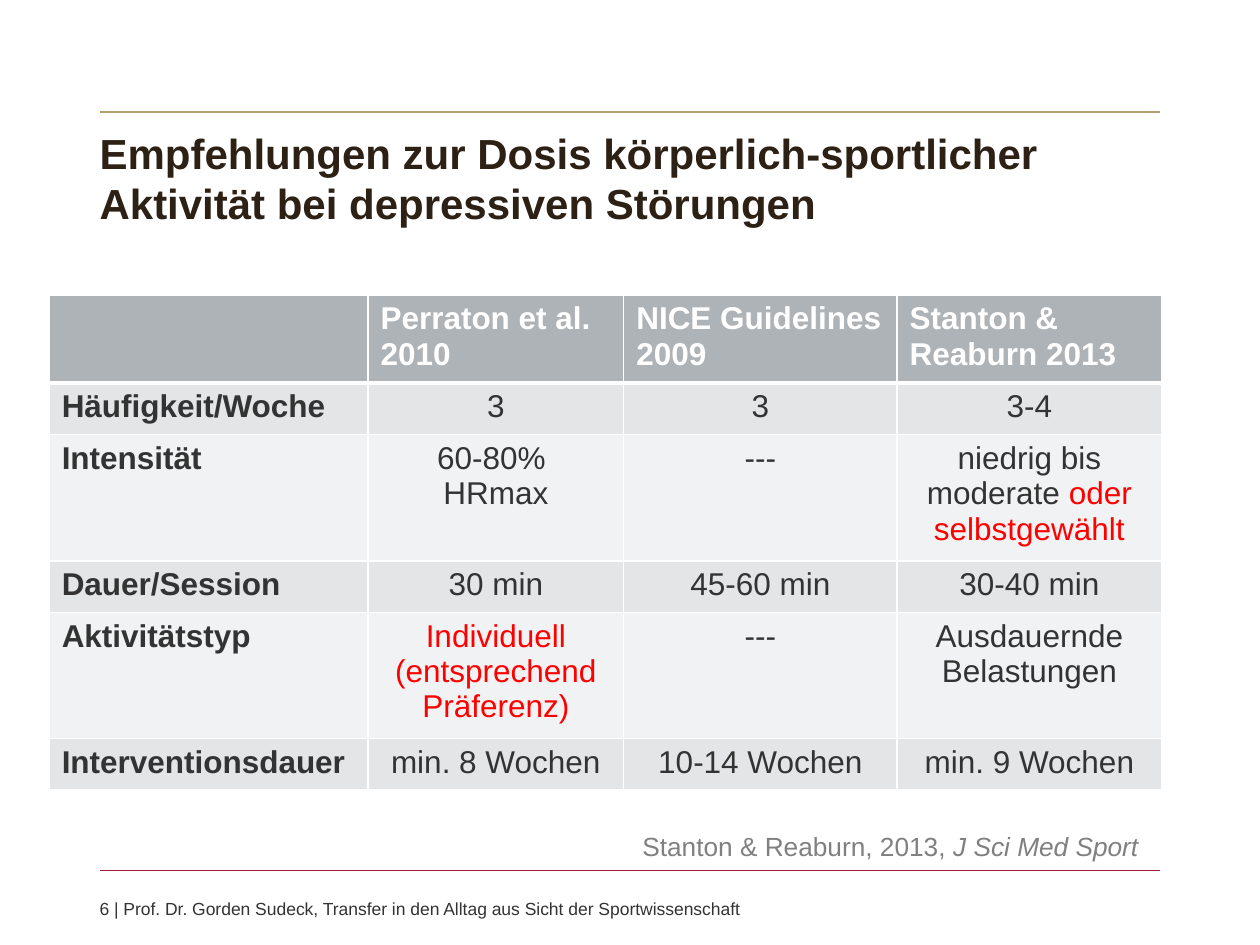
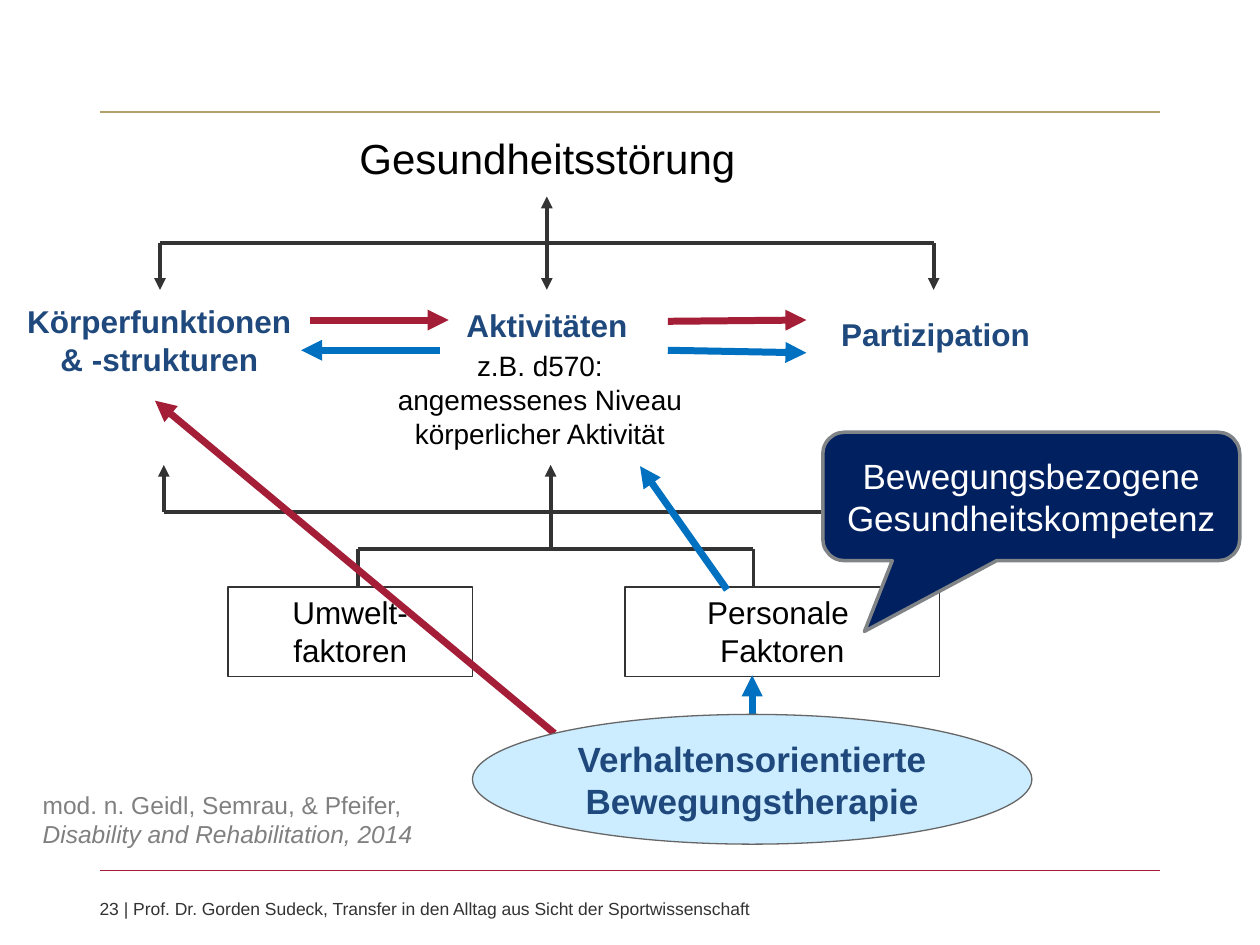
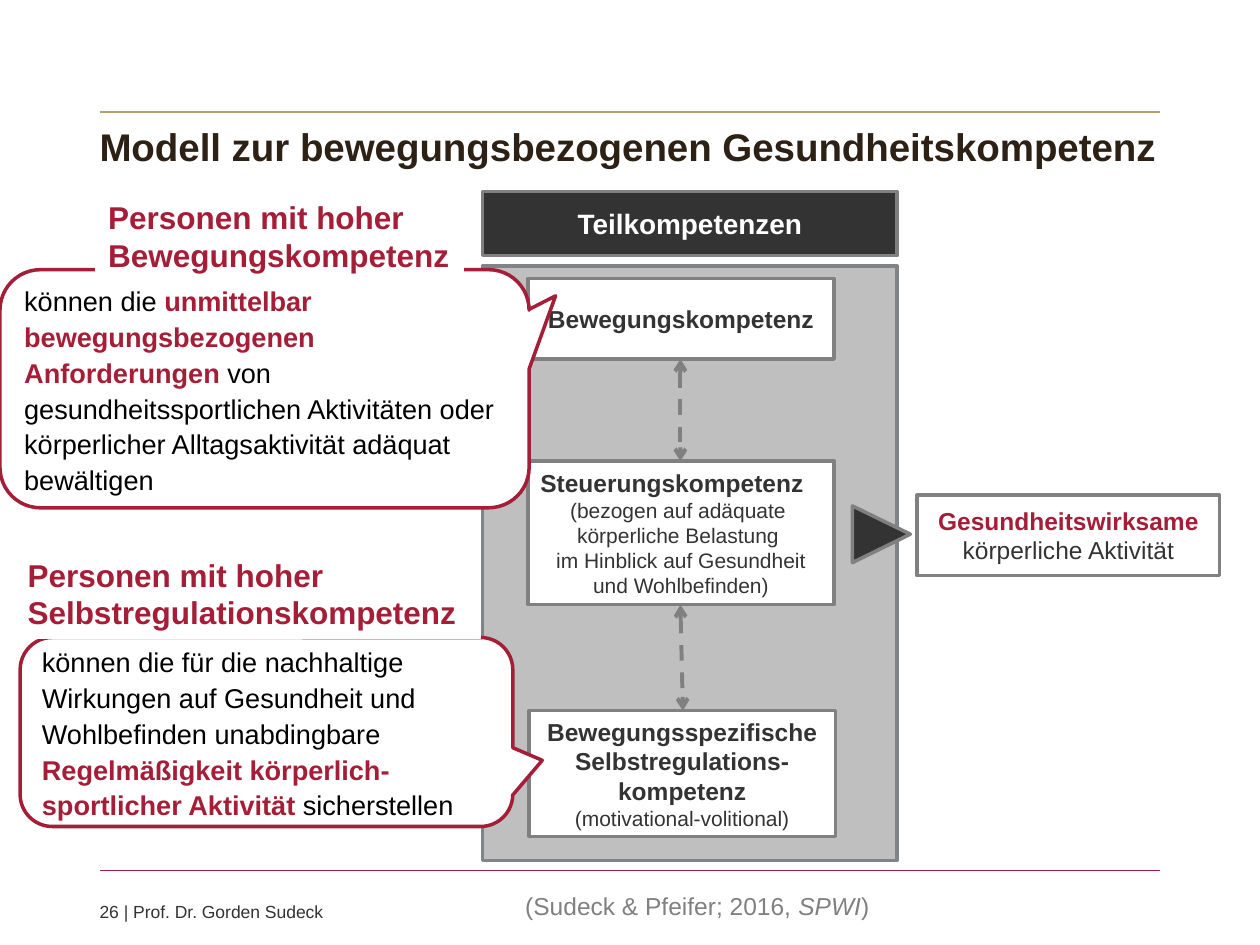
from lxml import etree
from pptx import Presentation
from pptx import util as u
from pptx.dml.color import RGBColor
from pptx.enum import dml, shapes, text
from pptx.oxml.ns import qn

FONT = "Arial"
WHITE = RGBColor(0xFF, 0xFF, 0xFF)
BLACK = RGBColor(0, 0, 0)
DARK = RGBColor(0x33, 0x33, 0x33)
GREY = RGBColor(0x80, 0x80, 0x80)
STEEL = RGBColor(0x80, 0x84, 0x87)
SILVER = RGBColor(0xBF, 0xBF, 0xBF)
EDGE = RGBColor(0x66, 0x66, 0x66)
BROWN = RGBColor(0x2D, 0x20, 0x15)
GOLD = RGBColor(0xB4, 0xA0, 0x69)
CRIMSON = RGBColor(0xA5, 0x1E, 0x37)
RED = RGBColor(0xFF, 0, 0)
BLUE = RGBColor(0, 0x70, 0xC0)
INK = RGBColor(0x1F, 0x49, 0x7D)
NAVY = RGBColor(0, 0x20, 0x60)
SKY = RGBColor(0xCC, 0xEC, 0xFF)
HEAD = RGBColor(0xAD, 0xB3, 0xB7)
BANDS = [RGBColor(0xE3, 0xE5, 0xE6), RGBColor(0xF1, 0xF2, 0xF3)]

RECT = shapes.MSO_SHAPE.RECTANGLE
CALLOUT = shapes.MSO_SHAPE.ROUNDED_RECTANGULAR_CALLOUT
LEFT, CENTER = text.PP_ALIGN.LEFT, text.PP_ALIGN.CENTER
TOP, MIDDLE, BOTTOM = text.MSO_ANCHOR.TOP, text.MSO_ANCHOR.MIDDLE, text.MSO_ANCHOR.BOTTOM

prs = Presentation()
prs.slide_width, prs.slide_height = u.Inches(10), u.Inches(7.5)
# Grid of 10 columns by 7.5 rows; all places are given in columns and rows
COL, ROW = prs.slide_width / 10, prs.slide_height / 7.5
X0, X1 = 0.79, 9.21


def box(s, at, paras=(), size=18, color=BLACK, bold=False, align=LEFT, anchor=TOP,
        kind=None, fill=None, line=None, width=2, inset=(0.1, 0.05), adj=(), spacing=None):
    """Text box or shape; a paragraph is a list of (text, font changes) runs."""
    x, y, w, h = at
    place = int(x * COL), int(y * ROW), int(w * COL), int(h * ROW)
    if kind is None:
        sp = s.shapes.add_textbox(*place)
    else:
        sp = s.shapes.add_shape(kind, *place)
        sp.shadow.inherit = False
        for i, value in enumerate(adj):
            sp.adjustments[i] = value
        if fill is None:
            sp.fill.background()
        else:
            sp.fill.solid()
            sp.fill.fore_color.rgb = fill
        sp.line.color.rgb, sp.line.width = line, u.Pt(width)
    tf = sp.text_frame
    tf.word_wrap, tf.vertical_anchor = True, anchor
    tf.margin_left = tf.margin_right = u.Inches(inset[0])
    tf.margin_top = tf.margin_bottom = u.Inches(inset[1])
    for i, runs in enumerate(paras):
        p = tf.add_paragraph() if i else tf.paragraphs[0]
        p.alignment, p.line_spacing = align, spacing
        p.font.name, p.font.size, p.font.bold = FONT, u.Pt(size), bold
        p.font.color.rgb = color
        for words, changes in runs:
            for n, part in enumerate(words.split("\n")):
                if n:
                    p.add_line_break()
                r = p.add_run()
                r.text = part
                r.font.bold, r.font.italic = changes.get("b"), changes.get("i")
                if "c" in changes:
                    r.font.color.rgb = changes["c"]
                if "sz" in changes:
                    r.font.size = u.Pt(changes["sz"])
    return sp


def connect(s, x1, y1, x2, y2, color=DARK, width=2.25, head=None, tail=None, dash=None):
    ends = int(x1 * COL), int(y1 * ROW), int(x2 * COL), int(y2 * ROW)
    c = s.shapes.add_connector(shapes.MSO_CONNECTOR.STRAIGHT, *ends)
    c.line.color.rgb, c.line.width = color, u.Pt(width)
    if dash:
        c.line.dash_style = dash
    ln = c.line._get_or_add_ln()
    for tag, style in (("a:headEnd", head), ("a:tailEnd", tail)):
        if style:
            etree.SubElement(ln, qn(tag)).set("type", style)
    etree.SubElement(c._element.spPr, qn("a:effectLst"))


# Shared frame: rules, title and footer
LONG = "Prof. Dr. Gorden Sudeck, Transfer in den Alltag aus Sicht der Sportwissenschaft"
FRAMES = [
    (f"6 | {LONG}", 7.13,
     "Empfehlungen zur Dosis körperlich-sportlicher Aktivität bei depressiven Störungen",
     24, (X0, 1, X1 - X0, 0.81)),
    (f"23 | {LONG}", 7.13, None, None, None),
    ("26 | Prof. Dr. Gorden Sudeck", 7.15,
     "Modell zur bewegungsbezogenen Gesundheitskompetenz", 22, (X0, 0.97, 9, 0.37)),
]
slides = []
for footer, y, title, size, at in FRAMES:
    s = prs.slides.add_slide(prs.slide_layouts[6])
    connect(s, X0, 0.89, X1, 0.89, GOLD, 0.75)
    connect(s, X0, 6.91, X1, 6.91, CRIMSON, 0.75)
    box(s, (X0, y, X1 - X0, 0.17), [[(footer, {})]], 10, DARK, inset=(0, 0))
    if title:
        box(s, at, [[(title, {})]], size, BROWN, True, anchor=BOTTOM, inset=(0, 0))
    slides.append(s)
dose, therapy, model = slides

# Dose table; text after a bar is red
ROWS = [
    ["", "Perraton et al.\n2010", "NICE Guidelines 2009", "Stanton & Reaburn 2013"],
    ["Häufigkeit/Woche", "3", "3", "3-4"],
    ["Intensität", "60-80% \nHRmax", "---", "niedrig bis moderate |oder selbstgewählt"],
    ["Dauer/Session", "30 min", "45-60 min", "30-40 min"],
    ["Aktivitätstyp", "|Individuell (entsprechend Präferenz)", "---", "Ausdauernde Belastungen"],
    ["Interventionsdauer", "min. 8 Wochen", "10-14 Wochen", "min. 9 Wochen"],
]
widths, heights = [2.53, 2.03, 2.17, 2.1], [0.65, 0.41, 0.94, 0.41, 0.94, 0.41]
table = dose.shapes.add_table(
    len(heights), len(widths), int(0.39 * COL), int(2.34 * ROW),
    int(sum(widths) * COL), int(sum(heights) * ROW)).table
for column, w in zip(table.columns, widths):
    column.width = int(w * COL)
for row, h in zip(table.rows, heights):
    row.height = int(h * ROW)
for i, row in enumerate(ROWS):
    for j, words in enumerate(row):
        cell = table.cell(i, j)
        cell.fill.solid()
        cell.fill.fore_color.rgb = BANDS[(i - 1) % 2] if i else HEAD
        plain, _, marked = words.partition("|")
        p = cell.text_frame.paragraphs[0]
        p.text = plain
        if marked:
            r = p.add_run()
            r.text = marked
            r.font.color.rgb = RED
        p.alignment = CENTER if i and j else LEFT
        p.font.name, p.font.size = FONT, u.Pt(18)
        p.font.bold = i == 0 or j == 0
        p.font.color.rgb = DARK if i else WHITE
        for r in p.runs:
            r.font.bold = p.font.bold
            if r.text != marked:
                r.font.color.rgb = DARK if i else WHITE
        # White cell borders, thick under the header
        for n, side in enumerate(("L", "R", "T", "B")):
            thick = (i, side) in ((0, "B"), (1, "T"))
            ln = etree.Element(qn(f"a:ln{side}"), w=str(u.Pt(3 if thick else 1)))
            solid = etree.SubElement(ln, qn("a:solidFill"))
            etree.SubElement(solid, qn("a:srgbClr"), val=str(WHITE))
            cell._tc.get_or_add_tcPr().insert(n, ln)
box(dose, (5, 6.54, 4.35, 0.35),
    [[("Stanton & Reaburn, 2013, ", {}), ("J Sci Med Sport", {"i": True})]], 15, GREY)

# Health model: lower bracket with the context factors
s = therapy
box(s, (2.33, 1, 4.03, 0.51), [[("Gesundheitsstörung", {})]], 24, align=CENTER)
STEP = 3.07
for x in (2.84, 5.98):
    connect(s, x, 4.36, x, 4.66)
connect(s, 2.84, 4.36, 5.98, 4.36)
connect(s, 1.3, 4.06, 1.3 + 2 * STEP, 4.06)
for x, w, words in ((1.81, 1.94, "Umwelt-faktoren"), (4.96, 2.5, "Personale \nFaktoren")):
    box(s, (x, 4.66, w, 0.71), [[(words, {})]], align=CENTER,
        kind=RECT, line=DARK, width=0.75)
for i, y in enumerate((4.06, 4.36, 4.06)):
    connect(s, 1.3 + i * STEP, 3.69, 1.3 + i * STEP, y, head="triangle")

# Components and upper bracket
for at, words in (((0, 2.35, 2.53, 0.71), "Körperfunktionen & -strukturen"),
                  ((3.35, 2.38, 1.98, 0.4), "Aktivitäten"),
                  ((6.44, 2.45, 1.97, 0.4), "Partizipation")):
    box(s, at, [[(words, {})]], 18, INK, True, CENTER)
connect(s, 1.27, 1.93, 1.27 + 2 * STEP, 1.93)
for i, (y, head) in enumerate(((1.93, None), (1.56, "triangle"), (1.93, None))):
    connect(s, 1.27 + i * STEP, y, 1.27 + i * STEP, 2.3, head=head, tail="triangle")
box(s, (0.24, 6.22, 3.75, 0.57),
    [[("mod. n. Geidl, Semrau, & Pfeifer, \n", {}),
      ("Disability and Rehabilitation, 2014", {"i": True})]], 14, GREY)

# Effect arrows and therapy
for color, *ends in ((BLUE, 5.77, 4.68, 5.08, 3.7), (BLUE, 5.97, 5.67, 5.97, 5.36),
                     (CRIMSON, 2.46, 2.54, 3.56, 2.54), (BLUE, 3.49, 2.78, 2.39, 2.78),
                     (CRIMSON, 5.3, 2.55, 6.4, 2.54), (BLUE, 5.3, 2.78, 6.4, 2.8),
                     (CRIMSON, 4.4, 5.82, 1.23, 3.18)):
    connect(s, *ends, color, 4, tail="triangle")
box(s, (3.75, 5.67, 4.44, 1.03), [[("Verhaltensorientierte Bewegungstherapie", {})]],
    20, INK, True, CENTER, MIDDLE, shapes.MSO_SHAPE.OVAL, SKY, EDGE, 0.75)
box(s, (2.95, 2.72, 2.67, 0.91),
    [[("z.B. d570: angemessenes Niveau körperlicher Aktivität", {})]], 16, align=CENTER)
box(s, (6.53, 3.43, 3.31, 1.02), [[("Bewegungsbezogene Gesundheitskompetenz", {})]],
    20, WHITE, False, CENTER, MIDDLE, CALLOUT, NAVY, STEEL, adj=(-0.4, 1.05, 0.17))

# Competence model: outcome and panel
s = model
box(s, (7.28, 3.93, 2.4, 0.64),
    [[("Gesundheitswirksame ", {"b": True, "c": CRIMSON}), ("körperliche Aktivität", {})]],
    14, DARK, False, CENTER, MIDDLE, RECT, WHITE, GREY, inset=(0, 0.05))
box(s, (3.83, 2.11, 3.29, 4.72), kind=RECT, fill=SILVER, line=STEEL)
box(s, (3.83, 1.52, 3.29, 0.51), [[("Teilkompetenzen", {})]],
    16, WHITE, True, CENTER, MIDDLE, RECT, DARK, GREY)

# Partial competences
note = {"sz": 12, "b": False}
for at, paras in (
    ((4.19, 2.21, 2.43, 0.64), [[("Bewegungskompetenz", {})]]),
    ((4.19, 3.66, 2.43, 1.14), [
        [("Steuerungskompetenz", {})],
        [("(bezogen auf adäquate \nkörperliche Belastung \n"
          "im Hinblick auf Gesundheit und Wohlbefinden)", note)]]),
    ((4.2, 5.64, 2.43, 1), [
        [("Bewegungsspezifische Selbstregulations-kompetenz", {})],
        [("(motivational-volitional)", note)]]),
):
    sp = box(s, at, paras, 14, DARK, True, CENTER, MIDDLE, RECT, WHITE, GREY)
    if paras[0][0][0] == "Steuerungskompetenz":
        sp.text_frame.paragraphs[0].alignment = LEFT
for ends in ((5.4, 4.8, 5.42, 5.64), (5.4, 2.85, 5.4, 3.66)):
    connect(s, *ends, GREY, head="arrow", tail="arrow", dash=dml.MSO_LINE.DASH)
sp = box(s, (6.77, 4.01, 0.45, 0.46), kind=shapes.MSO_SHAPE.ISOSCELES_TRIANGLE,
         fill=DARK, line=GREY)
sp.rotation = 90

# Callouts with their headings
strong = {"b": True, "c": CRIMSON}
for at, adj, runs, head_at, heading in (
    ((0.16, 5.06, 3.91, 1.5), (0.56, 0.15, 0.17),
     [("können die für die nachhaltige Wirkungen auf Gesundheit und Wohlbefinden unabdingbare ", {}),
      ("Regelmäßigkeit körperlich-sportlicher Aktivität ", strong), ("sicherstellen", {})],
     (0.12, 4.36, 3.69, 0.71), "Personen mit hoher Selbstregulationskompetenz"),
    ((0, 2.14, 4.2, 1.89), (0.55, -0.39, 0.17),
     [("können die ", {}), ("unmittelbar bewegungsbezogenen Anforderungen ", strong),
      ("von gesundheitssportlichen Aktivitäten oder körperlicher Alltagsaktivität "
       "adäquat bewältigen", {})],
     (0.76, 1.52, 2.92, 0.71), "Personen mit hoher Bewegungskompetenz"),
):
    box(s, at, [runs], 15.5, anchor=MIDDLE, kind=CALLOUT, fill=WHITE, line=CRIMSON,
        adj=adj, spacing=1.1)
    box(s, head_at, [[(heading, {})]], 18, CRIMSON, True, kind=RECT,
        fill=WHITE, line=WHITE, width=0.75)
box(s, (4.07, 7.02, 3.33, 0.34),
    [[("(Sudeck & Pfeifer; 2016, ", {}), ("SPWI", {"i": True}), (")", {})]], 14, GREY)

prs.save("out.pptx")
